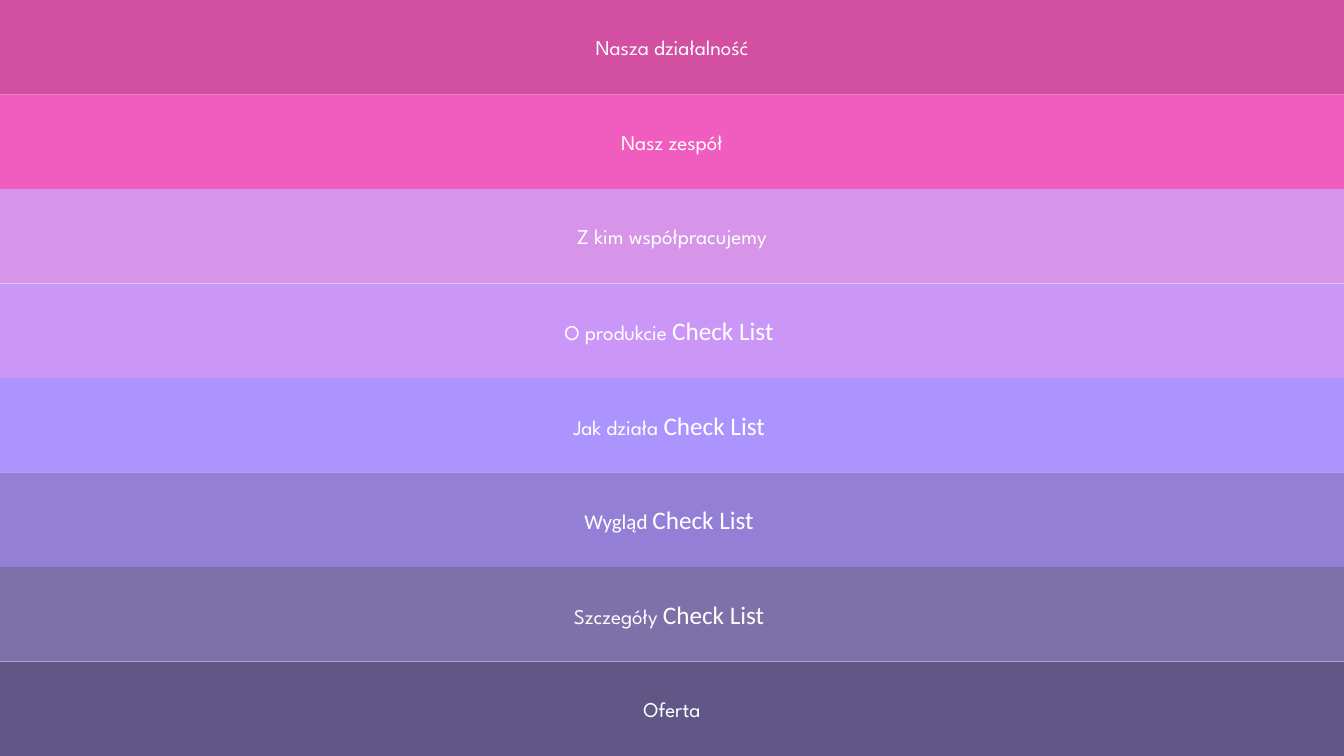
from pptx import Presentation
from pptx.dml.color import RGBColor
from pptx.enum.shapes import MSO_SHAPE
from pptx.enum.text import MSO_ANCHOR, PP_ALIGN
from pptx.util import Cm, Pt

WIDTH, HEIGHT = 33.87, 19.05
PRODUCT = "Check List "

# label, label font, fill, whether the product name follows
BANDS = [
    ("Nasza działalność", "League Spartan", "D24FA2", False),
    ("Nasz zespół", "League Spartan", "F15DBF", False),
    ("Z kim współpracujemy", "League Spartan", "D795E9", False),
    ("O produkcie ", "League Spartan", "CA97F8", True),
    ("Jak działa ", "League Spartan", "AC94FF", True),
    ("Wygląd ", "Calibri", "947FD7", True),
    ("Szczegóły ", "League Spartan", "7E71AA", True),
    ("Oferta", "League Spartan", "615787", False),
]


def color(code):
    return RGBColor.from_string(code)


class Agenda:
    ink = "FFFFFF"
    label_size = 15
    product_size = 18
    product_font = "Calibri"

    def __init__(self, deck):
        self.slide = deck.slides.add_slide(deck.slide_layouts[6])

    def style(self, font, name, size):
        font.name = name
        font.size = Pt(size)

    def band(self, top, height, fill):
        """Add a full-width bar and return its centred paragraph."""
        bar = self.slide.shapes.add_shape(
            MSO_SHAPE.RECTANGLE, 0, Cm(top), Cm(WIDTH), Cm(height))
        bar.shadow.inherit = False
        bar.fill.solid()
        bar.fill.fore_color.rgb = color(fill)
        bar.line.fill.background()
        frame = bar.text_frame
        frame.word_wrap = True
        frame.vertical_anchor = MSO_ANCHOR.MIDDLE
        line = frame.paragraphs[0]
        line.alignment = PP_ALIGN.CENTER
        line.font.color.rgb = color(self.ink)
        return line

    def title(self, line, label, font, product):
        """Write the label, and the larger product name if wanted."""
        self.style(line.font, font, self.label_size)
        line.add_run().text = label
        if product:
            run = line.add_run()
            run.text = PRODUCT
            self.style(run.font, self.product_font, self.product_size)


def main():
    deck = Presentation()
    deck.slide_width, deck.slide_height = Cm(WIDTH), Cm(HEIGHT)
    agenda = Agenda(deck)
    step = HEIGHT / len(BANDS)
    for row, (label, font, fill, product) in enumerate(BANDS):
        line = agenda.band(row * step, step, fill)
        agenda.title(line, label, font, product)
    deck.save("out.pptx")


if __name__ == "__main__":
    main()
